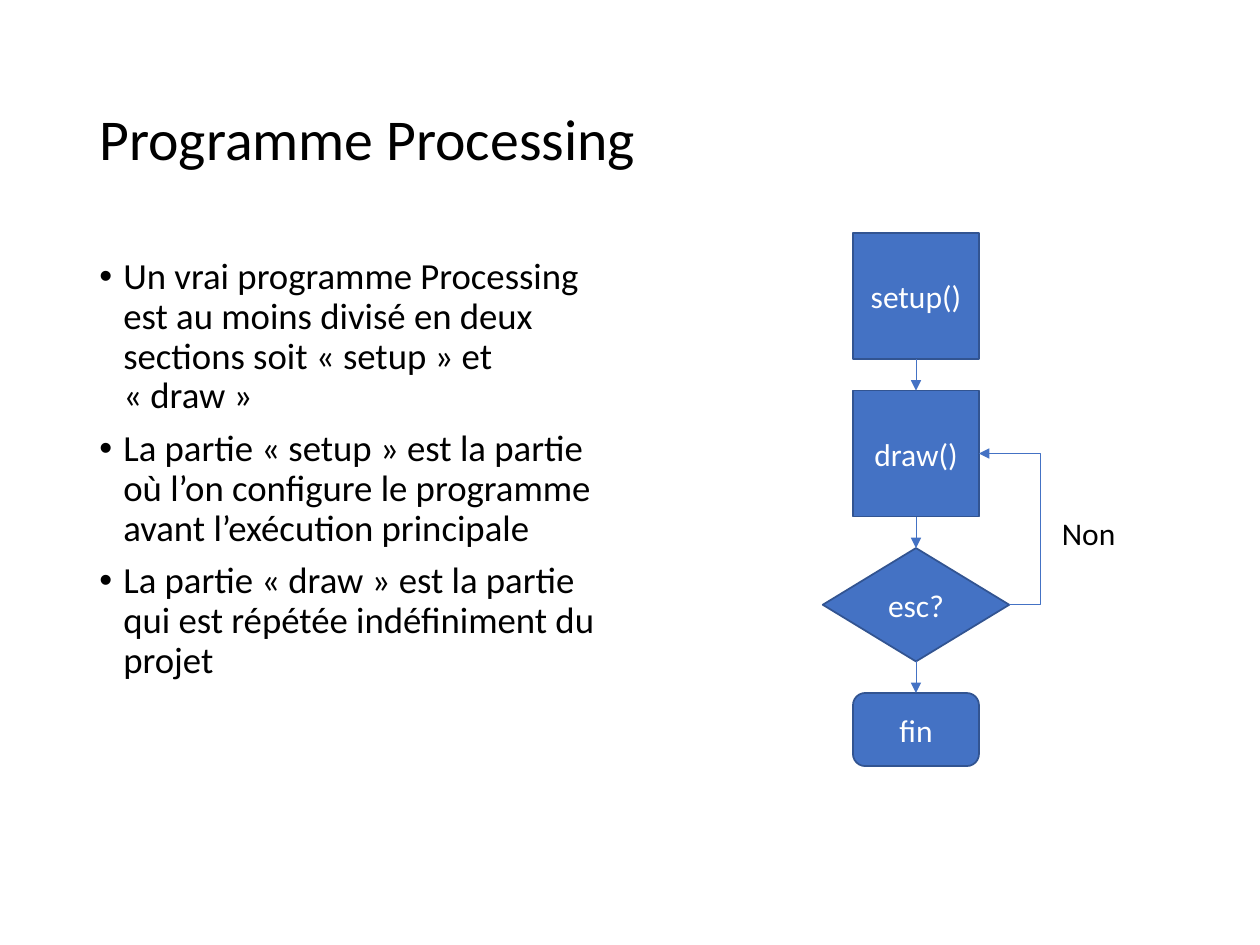
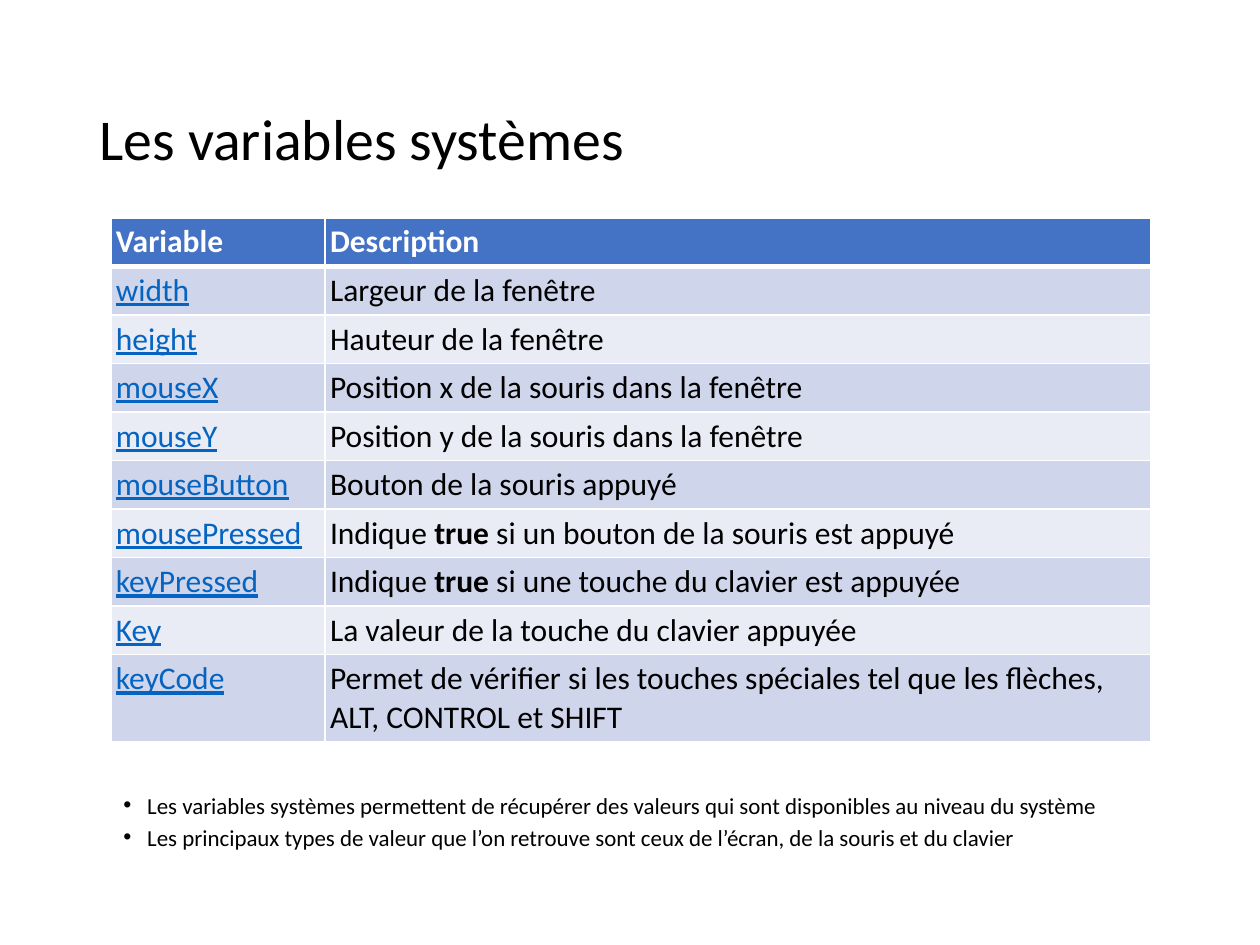
"""Build two slides on Processing: the program flow and the system variables."""
from lxml import etree
from pptx import Presentation
from pptx import util as u
from pptx.dml.color import RGBColor
from pptx.enum import shapes, text
from pptx.oxml import ns

FONT = "Calibri"
COLOURS = dict(ink="000000", paper="FFFFFF", accent="4472C4", edge="325491",
               link="0563C1", odd="CFD5EA", even="E9EBF5")

SLIDE_W, SLIDE_H = 10, 7.5
TITLE_BOX = (0.69, 0.4, 8.62, 1.45)
TITLE_SIZE, LABEL_SIZE = 33, 18

FLOW_TITLE = "Programme Processing"
FLOW_POINTS = [
    "Un vrai programme Processing est au moins divisé en deux sections soit « setup » et « draw »",
    "La partie « setup » est la partie où l’on configure le programme avant l’exécution principale",
    "La partie « draw » est la partie qui est répétée indéfiniment du projet",
]
FLOW_POINTS_BOX = (0.69, 2, 4.25, 4.76)
FLOW_STEPS = [
    ("setup()", "RECTANGLE", 1, 1),
    ("draw()", "RECTANGLE", 1, 1),
    ("esc?", "DIAMOND", 1.48, 0.9),
    ("fin", "ROUNDED_RECTANGLE", 1, 0.58),
]
FLOW_CENTRE, FLOW_TOP, FLOW_GAP = 7.27, 1.85, 0.25
LOOP_LABEL, LOOP_LABEL_BOX = "Non", (8.33, 4.03, 0.63, 0.4)
TOP, BOTTOM, RIGHT = 0, 2, 3

VARIABLES_TITLE = "Les variables systèmes"
VARIABLES = [
    ("Variable", "Description"),
    ("width", "Largeur de la fenêtre"),
    ("height", "Hauteur de la fenêtre"),
    ("mouseX", "Position x de la souris dans la fenêtre"),
    ("mouseY", "Position y de la souris dans la fenêtre"),
    ("mouseButton", "Bouton de la souris appuyé"),
    ("mousePressed", "Indique **true** si un bouton de la souris est appuyé"),
    ("keyPressed", "Indique **true** si une touche du clavier est appuyée"),
    ("Key", "La valeur de la touche du clavier appuyée"),
    ("keyCode", "Permet de vérifier si les touches spéciales tel que les flèches, ALT, CONTROL et SHIFT"),
]
VARIABLES_CORNER = (0.88, 1.73)
COLUMN_WIDTHS, ROW_HEIGHT, LAST_ROW_HEIGHT = (1.7, 6.55), 0.38, 0.68
CELL_MARGINS = dict.fromkeys(
    ("margin_left", "margin_top", "margin_right", "margin_bottom"), u.Inches(0.04))
VARIABLES_POINTS = [
    "Les variables systèmes permettent de récupérer des valeurs qui sont disponibles au niveau du système",
    "Les principaux types de valeur que l’on retrouve sont ceux de l’écran, de la souris et du clavier",
]
VARIABLES_POINTS_BOX = (0.88, 6.29, 8.25, 0.61)


def inches(lengths):
    return [u.Inches(length) for length in lengths]


def assign(target, values):
    for name, value in values.items():
        setattr(target, name, value)


def colour(name):
    return RGBColor.from_string(COLOURS[name])


def fill(part, name):
    part.fill.solid()
    part.fill.fore_color.rgb = colour(name)


def write(paragraph, words, size, ink="ink", **font_format):
    words = words.replace("« ", "«" + chr(160)).replace(" »", chr(160) + "»")
    for position, piece in enumerate(words.split("**")):
        run = paragraph.add_run()
        run.text = piece
        look = dict(name=FONT, size=u.Pt(size), bold=position % 2 == 1)
        assign(run.font, look | font_format)
        run.font.color.rgb = colour(ink)


def add_titled_slide(deck, title):
    slide = deck.slides.add_slide(deck.slide_layouts[5])
    heading = slide.shapes.title
    assign(heading, dict(zip(("left", "top", "width", "height"), inches(TITLE_BOX))))
    heading.text_frame.vertical_anchor = text.MSO_ANCHOR.MIDDLE
    paragraph = heading.text_frame.paragraphs[0]
    assign(paragraph, dict(alignment=text.PP_ALIGN.LEFT, line_spacing=0.9))
    write(paragraph, title, TITLE_SIZE)
    return slide


def add_points(slide, points, box, size, line_spacing):
    frame = slide.shapes.add_textbox(*inches(box)).text_frame
    frame.word_wrap = True
    for position, point in enumerate(points):
        paragraph = frame.add_paragraph() if position else frame.paragraphs[0]
        assign(paragraph, dict(line_spacing=line_spacing, space_before=u.Pt(7.5)))
        write(paragraph, point, size)
        properties = paragraph._p.get_or_add_pPr()
        indent = u.Inches(0.19)
        properties.set("marL", str(indent))
        properties.set("indent", str(-indent))
        etree.SubElement(properties, ns.qn("a:buFont"), typeface="Arial")
        etree.SubElement(properties, ns.qn("a:buChar"), char="•")


def add_step(slide, label, outline, width, height, top):
    step = slide.shapes.add_shape(
        getattr(shapes.MSO_SHAPE, outline),
        *inches((FLOW_CENTRE - width / 2, top, width, height)))
    step.shadow.inherit = False
    fill(step, "accent")
    step.line.color.rgb = colour("edge")
    step.line.width = u.Pt(1)
    step.text_frame.vertical_anchor = text.MSO_ANCHOR.MIDDLE
    paragraph = step.text_frame.paragraphs[0]
    paragraph.alignment = text.PP_ALIGN.CENTER
    write(paragraph, label, LABEL_SIZE, "paper")
    return step


def add_arrow(slide, bend, source, source_side, target, target_side):
    arrow = slide.shapes.add_connector(bend, 0, 0, 0, 0)
    arrow.begin_connect(source, source_side)
    arrow.end_connect(target, target_side)
    arrow.line.color.rgb = colour("accent")
    arrow.line.width = u.Pt(0.5)
    etree.SubElement(arrow.line._get_or_add_ln(), ns.qn("a:tailEnd"), type="triangle")
    etree.SubElement(arrow._element.spPr, ns.qn("a:effectLst"))
    return arrow


def add_flow(slide):
    steps, top = [], FLOW_TOP
    for label, outline, width, height in FLOW_STEPS:
        steps.append(add_step(slide, label, outline, width, height, top))
        top += height + FLOW_GAP
    for source, target in zip(steps, steps[1:]):
        add_arrow(slide, shapes.MSO_CONNECTOR.STRAIGHT, source, BOTTOM, target, TOP)

    _, draw, escape, _ = steps
    loop = add_arrow(slide, shapes.MSO_CONNECTOR.ELBOW, escape, RIGHT, draw, RIGHT)
    reach = round(-100000 * u.Inches(FLOW_GAP) / loop.width)
    guides = loop._element.spPr.prstGeom.get_or_add_avLst()
    etree.SubElement(guides, ns.qn("a:gd"), name="adj1", fmla=f"val {reach}")

    frame = slide.shapes.add_textbox(*inches(LOOP_LABEL_BOX)).text_frame
    frame.word_wrap = False
    write(frame.paragraphs[0], LOOP_LABEL, LABEL_SIZE)


def add_borders(cell, top, bottom):
    properties = cell._tc.get_or_add_tcPr()
    widths = dict(lnL=1, lnR=1, lnT=top, lnB=bottom)
    for position, (side, width) in enumerate(widths.items()):
        border = etree.Element(ns.qn(f"a:{side}"), w=str(u.Pt(width)))
        paint = etree.SubElement(border, ns.qn("a:solidFill"))
        etree.SubElement(paint, ns.qn("a:srgbClr"), val=COLOURS["paper"])
        properties.insert(position, border)


def add_variables(slide):
    heights = [ROW_HEIGHT] * (len(VARIABLES) - 1) + [LAST_ROW_HEIGHT]
    grid = slide.shapes.add_table(
        len(VARIABLES), len(COLUMN_WIDTHS),
        *inches((*VARIABLES_CORNER, sum(COLUMN_WIDTHS), sum(heights)))).table
    for column, width in zip(grid.columns, inches(COLUMN_WIDTHS)):
        column.width = width
    for row, height in zip(grid.rows, inches(heights)):
        row.height = height
    looks = [dict(ink="link", underline=True), dict(ink="ink")]
    for row, entry in enumerate(VARIABLES):
        band = ("odd" if row % 2 else "even") if row else "accent"
        for column, words in enumerate(entry):
            cell = grid.cell(row, column)
            assign(cell, CELL_MARGINS)
            fill(cell, band)
            add_borders(cell, top=3 if row == 1 else 1, bottom=1 if row else 3)
            look = looks[column] if row else dict(ink="paper", bold=True)
            write(cell.text_frame.paragraphs[0], words, LABEL_SIZE, **look)


def main():
    deck = Presentation()
    assign(deck, dict(slide_width=u.Inches(SLIDE_W), slide_height=u.Inches(SLIDE_H)))

    flow = add_titled_slide(deck, FLOW_TITLE)
    add_points(flow, FLOW_POINTS, FLOW_POINTS_BOX, size=21, line_spacing=0.9)
    add_flow(flow)

    variables = add_titled_slide(deck, VARIABLES_TITLE)
    add_variables(variables)
    add_points(variables, VARIABLES_POINTS, VARIABLES_POINTS_BOX, size=13.1, line_spacing=0.7)

    deck.save("out.pptx")


if __name__ == "__main__":
    main()
